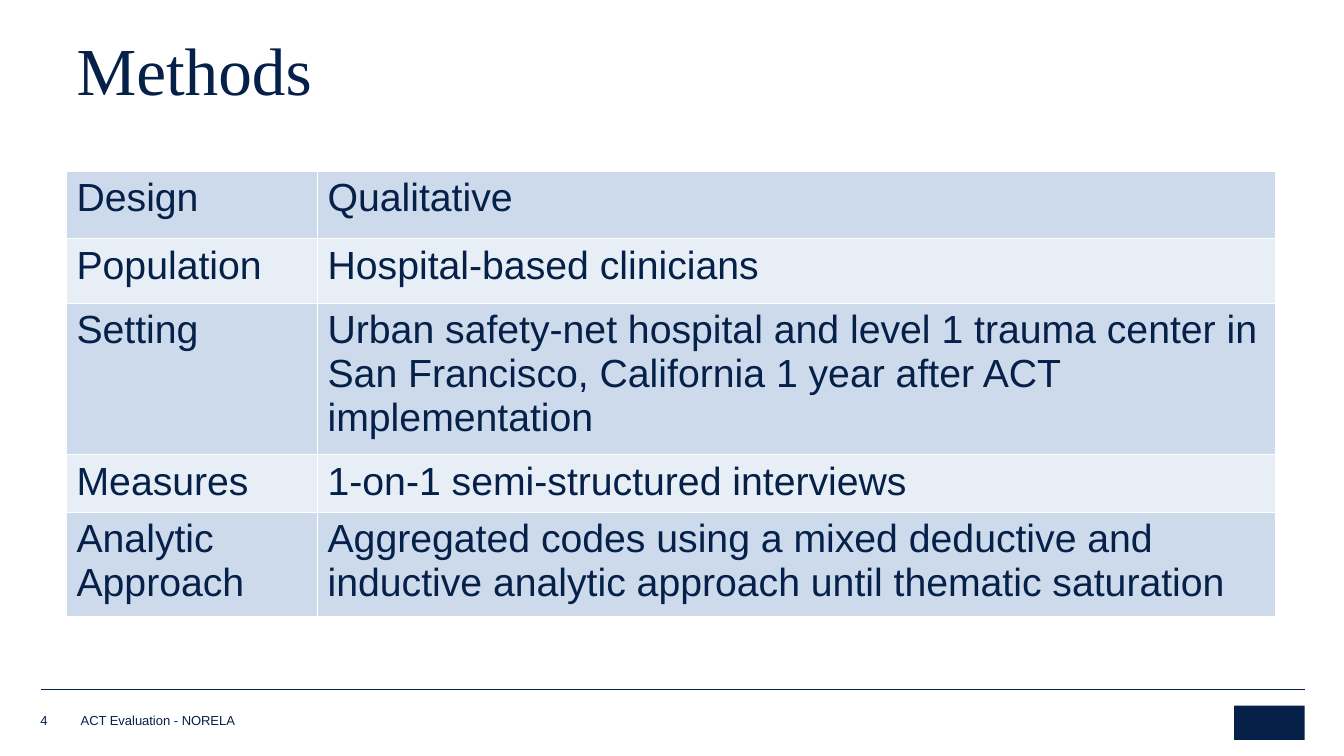
from lxml.etree import SubElement
from pptx import Presentation
from pptx.dml.color import RGBColor
from pptx.enum.shapes import MSO_CONNECTOR, MSO_SHAPE
from pptx.enum.text import MSO_ANCHOR, PP_ALIGN
from pptx.oxml.ns import qn
from pptx.util import Inches, Pt

NAVY = RGBColor(0x05, 0x20, 0x49)
BAND_DARK = RGBColor(0xCC, 0xDA, 0xEC)
BAND_LIGHT = RGBColor(0xE8, 0xEE, 0xF6)
WHITE = RGBColor(0xFF, 0xFF, 0xFF)

METHODS = [
    ("Design", "Qualitative"),
    ("Population", "Hospital-based clinicians"),
    ("Setting", "Urban safety-net hospital and level 1 trauma center in "
                "San Francisco, California 1 year after ACT implementation"),
    ("Measures", "1-on-1 semi-structured interviews"),
    ("Analytic Approach", "Aggregated codes using a mixed deductive and "
                          "inductive analytic approach until thematic saturation"),
]
COLUMN_WIDTHS = [2.49, 9.5]
ROW_HEIGHTS = [0.67, 0.64, 0.99, 0.57, 0.89]


class SlideBuilder:
    """Holds the slide and its style."""

    body_font = "Arial"
    title_font = "Times New Roman"

    def __init__(self, slide):
        self.slide = slide
        self.shapes = slide.shapes

    def style_text(self, frame, size, font=body_font):
        for paragraph in frame.paragraphs:
            paragraph.alignment = PP_ALIGN.LEFT
            for run in paragraph.runs:
                run.font.name = font
                run.font.size = Pt(size)
                run.font.color.rgb = NAVY

    def title(self, text, left, top, width, height):
        title = self.shapes.title
        title.left, title.top = Inches(left), Inches(top)
        title.width, title.height = Inches(width), Inches(height)
        frame = title.text_frame
        frame.text = text
        frame.vertical_anchor = MSO_ANCHOR.BOTTOM
        frame.paragraphs[0].line_spacing = 0.85
        self.style_text(frame, 48, self.title_font)

    def footer_text(self, text, left, top, width, height):
        box = self.shapes.add_textbox(
            Inches(left), Inches(top), Inches(width), Inches(height))
        frame = box.text_frame
        frame.word_wrap = True
        frame.margin_left = frame.margin_right = 0
        frame.margin_top = frame.margin_bottom = 0
        frame.vertical_anchor = MSO_ANCHOR.BOTTOM
        frame.text = text
        self.style_text(frame, 9.3)

    def rule(self, left, right, y):
        rule = self.shapes.add_connector(
            MSO_CONNECTOR.STRAIGHT, Inches(left), Inches(y), Inches(right), Inches(y))
        rule.line.color.rgb = NAVY
        rule.line.width = Pt(0.25)
        SubElement(rule._element.spPr, qn("a:effectLst"))

    def block(self, left, top, width, height):
        block = self.shapes.add_shape(
            MSO_SHAPE.RECTANGLE, Inches(left), Inches(top), Inches(width), Inches(height))
        block.shadow.inherit = False
        block.fill.solid()
        block.fill.fore_color.rgb = NAVY
        block.line.fill.background()

    def cell_borders(self, cell):
        properties = cell._tc.get_or_add_tcPr()
        for side in ("lnL", "lnR", "lnT", "lnB"):
            border = SubElement(properties, qn(f"a:{side}"), w=str(Pt(1)))
            fill = SubElement(border, qn("a:solidFill"))
            SubElement(fill, qn("a:srgbClr"), val=str(WHITE))

    def table(self, entries, left, top, widths, heights):
        table = self.shapes.add_table(
            len(entries), len(widths), Inches(left), Inches(top),
            Inches(sum(widths)), Inches(sum(heights))).table
        table.first_row = False
        for column, width in zip(table.columns, widths):
            column.width = Inches(width)
        for index, (row, height, texts) in enumerate(zip(table.rows, heights, entries)):
            row.height = Inches(height)
            for cell, text in zip(row.cells, texts):
                self.cell_borders(cell)
                cell.fill.solid()
                cell.fill.fore_color.rgb = BAND_LIGHT if index % 2 else BAND_DARK
                cell.text_frame.text = text
                self.style_text(cell.text_frame, 28)


def main():
    presentation = Presentation()
    presentation.slide_width = Inches(13.33)
    presentation.slide_height = Inches(7.5)
    title_only = presentation.slide_layouts[5]
    builder = SlideBuilder(presentation.slides.add_slide(title_only))

    builder.rule(0.41, 12.94, 6.84)
    builder.block(12.24, 7, 0.7, 0.34)
    builder.footer_text("4", 0.4, 7.05, 0.36, 0.17)
    builder.title("Methods", 0.66, 0.46, 11.92, 0.67)
    builder.table(METHODS, 0.66, 1.7, COLUMN_WIDTHS, ROW_HEIGHTS)
    builder.footer_text("ACT Evaluation - NORELA", 0.8, 7.07, 6.29, 0.15)
    presentation.save("out.pptx")


if __name__ == "__main__":
    main()
